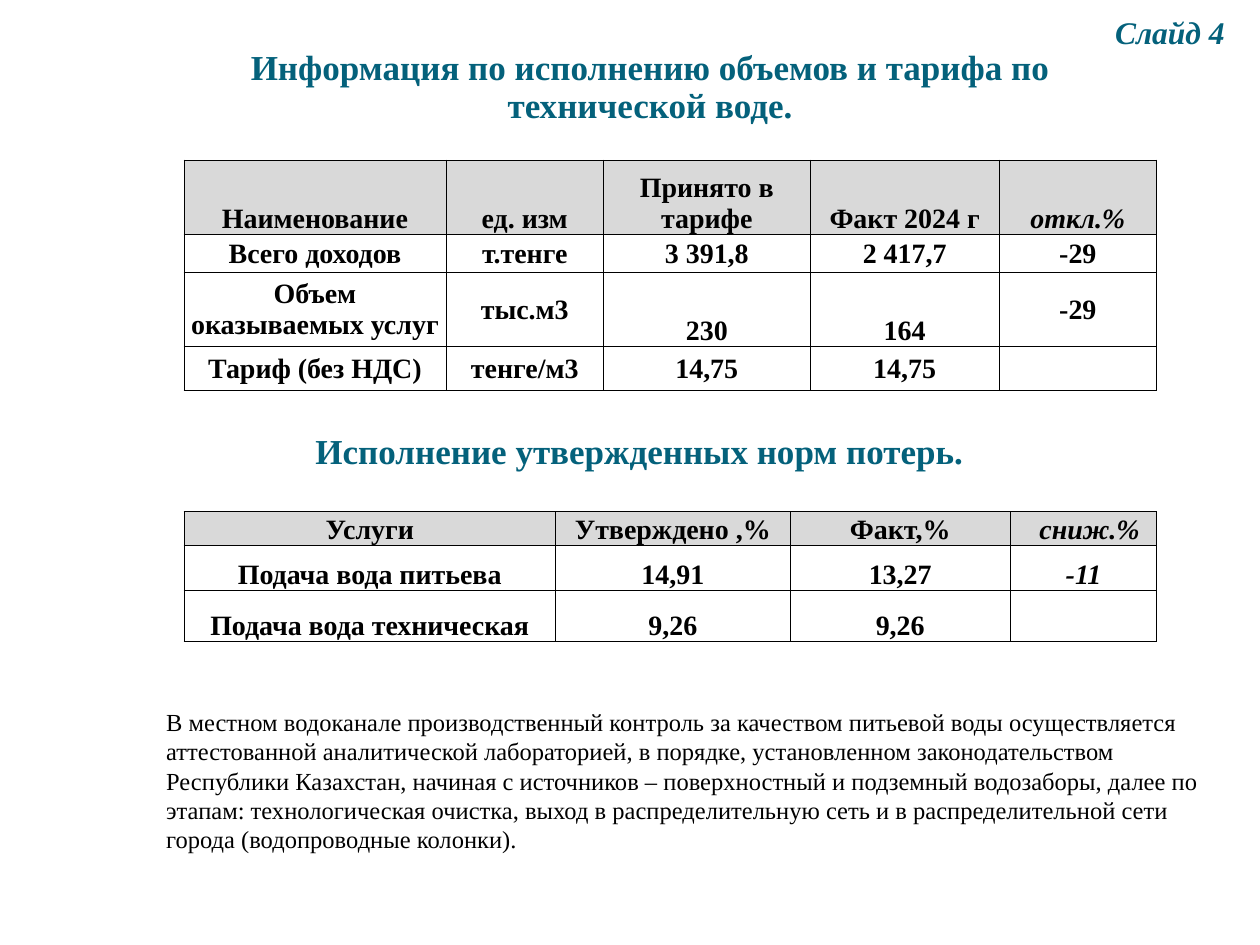
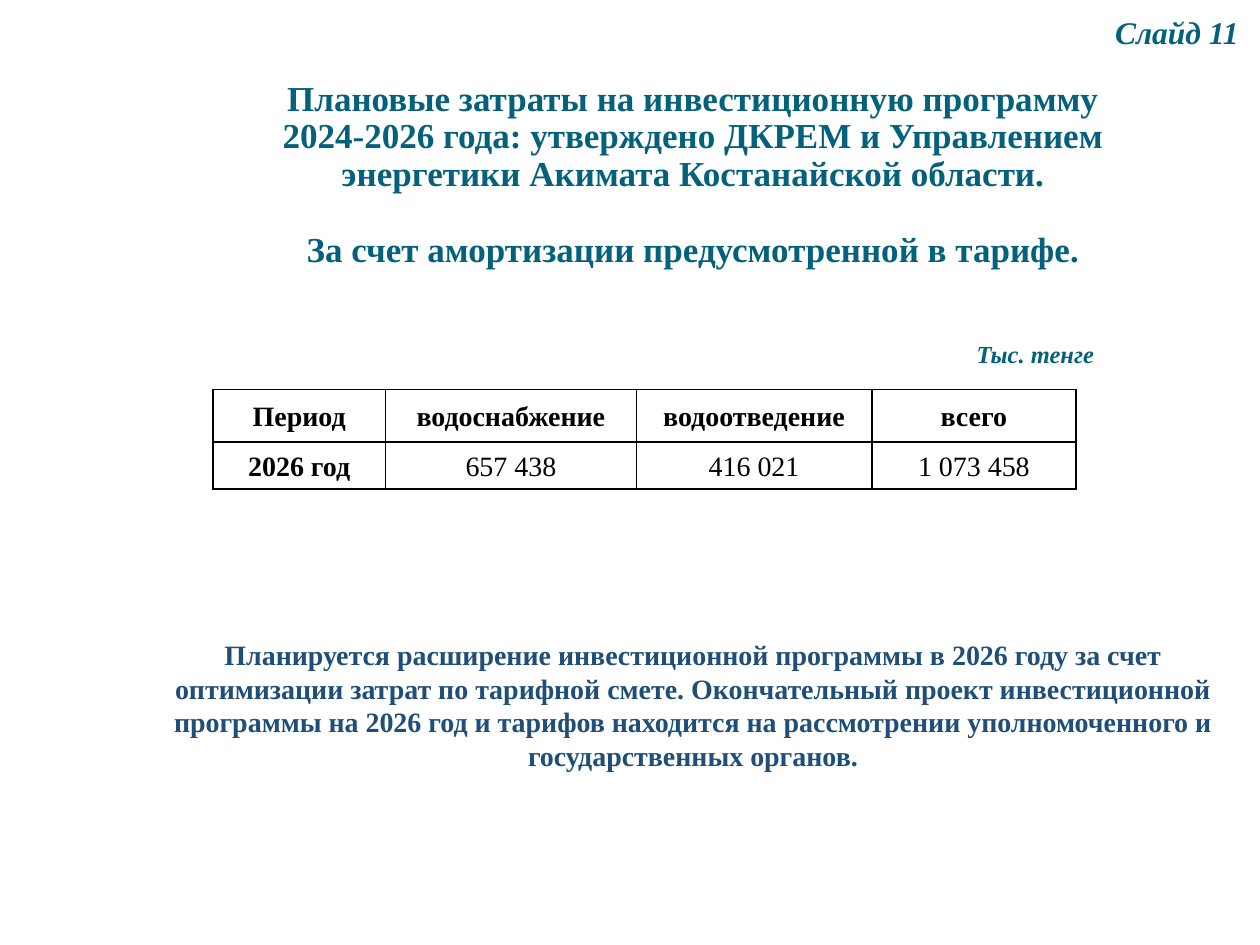
from dataclasses import dataclass

from pptx import Presentation
from pptx.dml.color import RGBColor
from pptx.enum.text import MSO_ANCHOR, MSO_AUTO_SIZE, PP_ALIGN
from pptx.oxml import parse_xml
from pptx.oxml.ns import nsdecls
from pptx.util import Inches, Pt


@dataclass(frozen=True)
class Theme:
    font: str = "Times New Roman"
    teal: str = "04617B"
    navy: str = "1F4E79"
    ink: str = "000000"
    paper: str = "FFFFFF"
    header: str = "D9D9D9"
    heading_size: int = 20
    label_size: int = 18
    table_size: int = 16
    note_size: int = 14
    tight: float = 0.9
    heading_gap: float = 21.5


THEME = Theme()
TITLE_ONLY = 5
FRAME_INSETS = (0.07, 0.04, 0.07, 0.04)
NOTE_INSETS = (0.1, 0.05, 0.1, 0.05)
TIGHT_INSETS = (0.01, 0.01, 0.01, 0)
ROOMY_INSETS = (0.07, 0, 0.07, 0)
HEADING = {"size": THEME.heading_size, "color": THEME.teal, "bold": True}
LABEL = {"size": THEME.label_size, "color": THEME.teal, "bold": True, "italic": True}
UNIT = {**LABEL, "size": THEME.note_size}
NOTE = {"size": THEME.note_size, "color": THEME.ink}
PLAN_NOTE = {"size": THEME.table_size, "color": THEME.navy, "bold": True}
TABLE_TEXT = {"size": THEME.table_size, "color": THEME.ink, "bold": True}


def set_attributes(target, values):
    for name, value in values.items():
        setattr(target, name, value)


def write_paragraph(paragraph, text, style, alignment, line_spacing=1.0):
    set_attributes(paragraph, {"alignment": alignment, "line_spacing": line_spacing})
    run = paragraph.add_run()
    run.text = text
    set_attributes(run.font, {
        "name": THEME.font,
        "size": Pt(style["size"]),
        "bold": style.get("bold", False),
        "italic": style.get("italic", False),
    })
    run.font.color.rgb = RGBColor.from_string(style["color"])


def set_insets(target, insets):
    names = ("margin_left", "margin_top", "margin_right", "margin_bottom")
    set_attributes(target, dict(zip(names, map(Inches, insets))))


def fill_frame(shape, lines, style, alignment, line_spacing=1.0,
               anchor=MSO_ANCHOR.MIDDLE, insets=FRAME_INSETS):
    frame = shape.text_frame
    set_attributes(frame, {
        "word_wrap": True,
        "auto_size": MSO_AUTO_SIZE.NONE,
        "vertical_anchor": anchor,
    })
    set_insets(frame, insets)
    for index, line in enumerate(lines):
        paragraph = frame.add_paragraph() if index else frame.paragraphs[0]
        paragraph.space_before = Pt(0)
        write_paragraph(paragraph, line, style, alignment, line_spacing)


def add_text(slide, box, text, style, alignment, **options):
    shape = slide.shapes.add_textbox(*map(Inches, box))
    fill_frame(shape, [text], style, alignment, **options)


def place_title(slide, box, lines):
    title = slide.shapes.title
    names = ("left", "top", "width", "height")
    set_attributes(title, dict(zip(names, map(Inches, box))))
    fill_frame(title, lines, HEADING, PP_ALIGN.CENTER, THEME.tight)
    return title


def add_slide_label(slide, number):
    add_text(slide, (8.78, 0.15, 1.2, 0.24), f"Слайд {number}", LABEL,
             PP_ALIGN.LEFT, line_spacing=THEME.tight)


def add_note(slide, box, text, style, alignment):
    add_text(slide, box, text, style, alignment,
             anchor=MSO_ANCHOR.TOP, insets=NOTE_INSETS)


def draw_borders(cell, width):
    properties = cell._tc.get_or_add_tcPr()
    for index, side in enumerate(("lnL", "lnR", "lnT", "lnB")):
        properties.insert(index, parse_xml(
            f'<a:{side} {nsdecls("a")} w="{Pt(width)}"><a:solidFill>'
            f'<a:srgbClr val="{THEME.ink}"/></a:solidFill></a:{side}>'))


def add_grid(slide, left, top, columns, heights, rows, header_fill, border,
             insets=TIGHT_INSETS, line_spacing=1.0,
             anchors=MSO_ANCHOR.MIDDLE, special=None):
    special = special or {}
    frame = slide.shapes.add_table(
        len(heights), len(columns), Inches(left), Inches(top),
        Inches(sum(columns)), Inches(sum(heights)))
    table = frame.table
    table.horz_banding = False
    for column, width in zip(table.columns, columns):
        column.width = Inches(width)
    for row, height in zip(table.rows, heights):
        row.height = Inches(height)
    for row_index, row in enumerate(rows):
        for column_index, text in enumerate(row):
            cell = table.cell(row_index, column_index)
            change = special.get((row_index, column_index), {})
            set_insets(cell, change.get("insets", insets))
            header = row_index == 0
            cell.vertical_anchor = change.get("anchor", anchors)
            cell.fill.solid()
            cell.fill.fore_color.rgb = RGBColor.from_string(
                header_fill if header else THEME.paper)
            draw_borders(cell, border)
            if text:
                write_paragraph(
                    cell.text_frame.paragraphs[0], text,
                    {**TABLE_TEXT, **change.get("style", {})},
                    change.get("alignment", PP_ALIGN.CENTER), line_spacing)


def add_tariff_table(slide, left, top):
    rows = [
        ("Наименование", "ед. изм", "Принято в тарифе", "Факт 2024 г", "откл.%"),
        ("Всего доходов", "т.тенге", "3 391,8", "2 417,7", "-29"),
        ("Объем оказываемых услуг", "тыс.м3", "230", "164", "-29"),
        ("Тариф (без НДС)", "тенге/м3", "14,75", "14,75", ""),
    ]
    bottom = {"anchor": MSO_ANCHOR.BOTTOM}
    special = {(0, column): bottom for column in range(4)}
    special |= {(2, 2): bottom, (2, 3): bottom,
                (0, 4): {**bottom, "style": {"italic": True}}}
    add_grid(slide, left, top, (2.08, 1.25, 1.64, 1.5, 1.25),
             (0.59, 0.3, 0.59, 0.35), rows, THEME.header, 0.5, special=special)


def add_loss_table(slide, left, top):
    rows = [
        ("Услуги", "Утверждено ,%", "Факт,%", "сниж.%"),
        ("Подача вода питьева", "14,91", "13,27", "-11"),
        ("Подача вода техническая", "9,26", "9,26", ""),
    ]
    italic = {"style": {"italic": True}}
    special = {
        (0, 3): {**italic, "alignment": PP_ALIGN.LEFT,
                 "insets": (0.23, 0.01, 0.01, 0)},
        (1, 3): italic,
    }
    add_grid(slide, left, top, (2.95, 1.86, 1.75, 1.16), (0.27, 0.36, 0.4), rows,
             THEME.header, 0.5, anchors=MSO_ANCHOR.BOTTOM, special=special)


def add_investment_table(slide, left, top):
    rows = [
        ("Период", "водоснабжение", "водоотведение", "всего"),
        ("2026 год", "657 438", "416 021", "1 073 458"),
    ]
    special = {(1, column): {"style": {"bold": False}} for column in range(1, 4)}
    add_grid(slide, left, top, (1.37, 1.99, 1.87, 1.62), (0.42, 0.37), rows,
             THEME.paper, 1, insets=ROOMY_INSETS, line_spacing=1.07,
             special=special)


def build_tariff_slide(slide):
    place_title(slide, (1.3, 0.4, 7.72, 0.6),
                ["Информация по исполнению объемов и тарифа по технической воде."])
    add_text(slide, (0.98, 3.3, 8.19, 0.6), "Исполнение утвержденных норм потерь.",
             HEADING, PP_ALIGN.CENTER, line_spacing=THEME.tight)
    add_loss_table(slide, 1.46, 4.06)
    add_tariff_table(slide, 1.46, 1.27)
    add_note(slide, (1.22, 5.56, 8.58, 1.28),
             "В местном водоканале производственный контроль за качеством питьевой воды "
             "осуществляется аттестованной аналитической лабораторией, в порядке, "
             "установленном законодательством Республики Казахстан, начиная с источников "
             "– поверхностный и подземный водозаборы, далее по этапам: технологическая "
             "очистка, выход в распределительную сеть и в распределительной сети города "
             "(водопроводные колонки).", NOTE, PP_ALIGN.LEFT)
    add_slide_label(slide, 4)


def build_investment_slide(slide):
    title = place_title(slide, (2.02, 0.64, 6.96, 1.5), [
        "Плановые затраты на инвестиционную программу",
        "2024-2026 года: утверждено ДКРЕМ и Управлением энергетики Акимата "
        "Костанайской области.",
        "За счет амортизации предусмотренной в тарифе.",
    ])
    title.text_frame.paragraphs[-1].space_before = Pt(THEME.heading_gap)
    add_text(slide, (7.68, 2.67, 1.65, 0.3), "Тыс. тенге", UNIT,
             PP_ALIGN.LEFT, line_spacing=THEME.tight)
    add_investment_table(slide, 1.69, 3.09)
    add_note(slide, (1.21, 5.01, 8.58, 1.18),
             "Планируется расширение инвестиционной программы в 2026 году за счет "
             "оптимизации затрат по тарифной смете. Окончательный проект инвестиционной "
             "программы на 2026 год и тарифов находится на рассмотрении уполномоченного "
             "и государственных органов.", PLAN_NOTE, PP_ALIGN.CENTER)
    add_slide_label(slide, 11)


def main():
    presentation = Presentation()
    set_attributes(presentation, {"slide_width": Inches(10), "slide_height": Inches(7.5)})
    for build in (build_tariff_slide, build_investment_slide):
        build(presentation.slides.add_slide(presentation.slide_layouts[TITLE_ONLY]))
    presentation.save("out.pptx")


if __name__ == "__main__":
    main()
